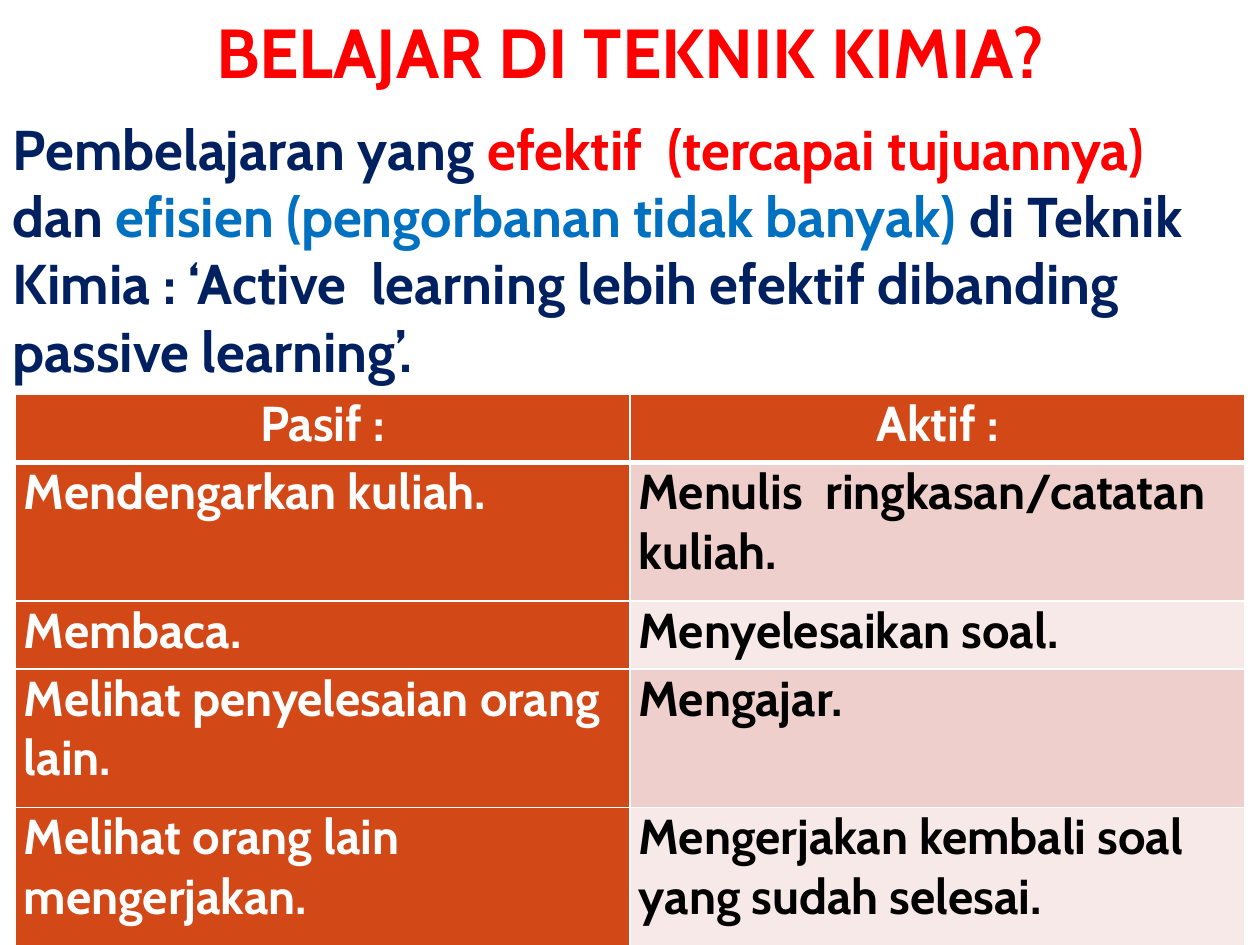
from dataclasses import dataclass

import pptx
import pptx.dml.color
import pptx.enum.text
import pptx.oxml
import pptx.oxml.ns
import pptx.util
from pptx.util import Inches

FONT = "Cabin"
WHITE, BLACK, RED = "FFFFFF", "000000", "FF0000"
NAVY, BLUE, RUST = "002060", "0070C0", "D34817"
BANDS = ("EFCFCC", "F7E9E8")
LEFT = pptx.enum.text.PP_ALIGN.LEFT
CENTER = pptx.enum.text.PP_ALIGN.CENTER


@dataclass
class Span:
    text: str
    color: str


@dataclass
class Comparison:
    passive: str
    active: str


INTRODUCTION = [
    Span("Pembelajaran yang", NAVY),
    Span(" efektif  (tercapai tujuannya) ", RED),
    Span("dan ", NAVY),
    Span("efisien (pengorbanan tidak banyak) ", BLUE),
    Span("di Teknik Kimia : ‘Active  learning lebih efektif dibanding "
         "passive learning’.", NAVY),
]
COMPARISONS = [
    Comparison("Pasif :", "Aktif :"),
    Comparison("Mendengarkan kuliah.", "Menulis  ringkasan/catatan kuliah."),
    Comparison("Membaca.", "Menyelesaikan soal."),
    Comparison("Melihat penyelesaian orang lain.", "Mengajar."),
    Comparison("Melihat orang lain mengerjakan.",
               "Mengerjakan kembali soal yang sudah selesai."),
]
ROW_HEIGHTS = (0.54, 1.1, 0.54, 1.1, 1.1)


def rgb(value: str) -> pptx.dml.color.RGBColor:
    return pptx.dml.color.RGBColor.from_string(value)


def add_span(para, text: str, *, size: float, color: str) -> None:
    span = para.add_run()
    span.text = text
    span.font.name = FONT
    span.font.size = pptx.util.Pt(size)
    span.font.bold = True
    span.font.color.rgb = rgb(color)


def add_text(page, left: float, top: float, width: float, height: float,
             spans: list[Span], *, size: float, align=LEFT,
             anchor=pptx.enum.text.MSO_ANCHOR.TOP) -> None:
    box = page.shapes.add_textbox(
        Inches(left), Inches(top), Inches(width), Inches(height))
    frame = box.text_frame
    frame.word_wrap = True
    frame.vertical_anchor = anchor
    para = frame.paragraphs[0]
    para.alignment = align
    for span in spans:
        add_span(para, span.text, size=size, color=span.color)


def add_border(cell, side: str, points: float) -> None:
    line = pptx.oxml.parse_xml(
        f'<a:{side} {pptx.oxml.ns.nsdecls("a")} w="{pptx.util.Pt(points)}">'
        f'<a:solidFill><a:srgbClr val="{WHITE}"/></a:solidFill></a:{side}>')
    properties = cell._tc.get_or_add_tcPr()
    position = ("lnL", "lnR", "lnT", "lnB").index(side)
    properties.insert(position, line)


def fill_cell(cell, text: str, *, color: str, fill: str, align=LEFT,
              top_line: float = 1, bottom_line: float = 1) -> None:
    cell.margin_left = cell.margin_right = Inches(0.07)
    cell.margin_top = cell.margin_bottom = 0
    cell.fill.solid()
    cell.fill.fore_color.rgb = rgb(fill)
    para = cell.text_frame.paragraphs[0]
    para.alignment = align
    add_span(para, text, size=28, color=color)
    widths = {"lnL": 1, "lnR": 1, "lnT": top_line, "lnB": bottom_line}
    for side, points in widths.items():
        add_border(cell, side, points)


def add_comparison_table(page) -> None:
    table = page.shapes.add_table(
        len(COMPARISONS), 2, Inches(0.12), Inches(3.13),
        Inches(9.76), Inches(sum(ROW_HEIGHTS))).table
    table.first_col = True
    for index, (entry, height) in enumerate(zip(COMPARISONS, ROW_HEIGHTS)):
        table.rows[index].height = Inches(height)
        header = index == 0
        layout = {
            "align": CENTER if header else LEFT,
            "top_line": 3 if index == 1 else 1,
            "bottom_line": 3 if header else 1,
        }
        fill_cell(table.cell(index, 0), entry.passive,
                  color=WHITE, fill=RUST, **layout)
        fill_cell(table.cell(index, 1), entry.active,
                  color=WHITE if header else BLACK,
                  fill=RUST if header else BANDS[(index - 1) % 2], **layout)


def main() -> None:
    deck = pptx.Presentation()
    deck.slide_width, deck.slide_height = Inches(10), Inches(7.5)
    page = deck.slides.add_slide(deck.slide_layouts[6])
    add_text(page, 0, 0.86, 9.88, 1.97, INTRODUCTION, size=32)
    add_text(page, 0.5, 0.05, 9, 0.7, [Span("BELAJAR DI TEKNIK KIMIA?", RED)],
             size=39.6, align=CENTER,
             anchor=pptx.enum.text.MSO_ANCHOR.MIDDLE)
    add_comparison_table(page)
    deck.save("out.pptx")


if __name__ == "__main__":
    main()
